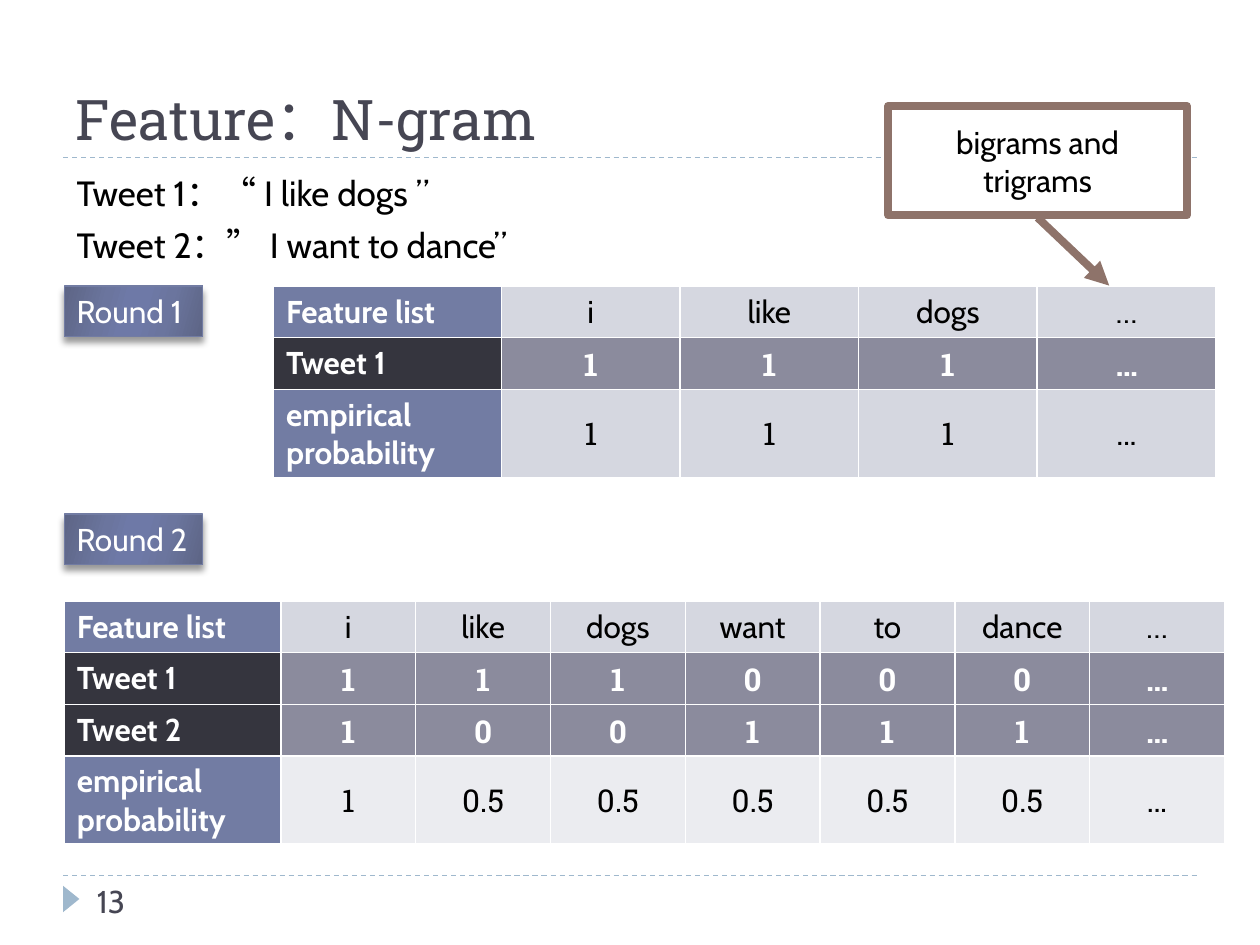
from dataclasses import dataclass
from typing import NamedTuple

from lxml.etree import SubElement
from pptx import Presentation
from pptx.dml.color import RGBColor
from pptx.enum.dml import MSO_LINE
from pptx.enum.shapes import MSO_CONNECTOR, MSO_SHAPE
from pptx.enum.text import MSO_ANCHOR, PP_ALIGN
from pptx.oxml import parse_xml
from pptx.oxml.ns import nsdecls, qn
from pptx.util import Inches, Pt

BLACK = RGBColor(0x00, 0x00, 0x00)
WHITE = RGBColor(0xFF, 0xFF, 0xFF)
SLATE = RGBColor(0x46, 0x46, 0x53)
SKY = RGBColor(0x9F, 0xB8, 0xCD)
BLUE = RGBColor(0x72, 0x7C, 0xA3)
CHARCOAL = RGBColor(0x35, 0x35, 0x3E)
GREY = RGBColor(0x8B, 0x8B, 0x9D)
PALE = RGBColor(0xD5, 0xD7, 0xE0)
PALEST = RGBColor(0xEB, 0xEC, 0xF0)
BROWN = RGBColor(0x8E, 0x73, 0x6A)
EDGE_BLUE = RGBColor(0x5D, 0x65, 0x85)
MID_BLUE = RGBColor(0x6B, 0x75, 0x9E)
CORE_BLUE = RGBColor(0x6E, 0x79, 0xA7)
BADGE_STOPS = ((0, EDGE_BLUE), (30, MID_BLUE), (45, CORE_BLUE),
               (55, CORE_BLUE), (73, MID_BLUE), (100, EDGE_BLUE))

SANS, SLAB = "Cabin", "Roboto Slab"

# The page is a grid of 100 columns and 75 rows of square units
PAGE_COLUMNS, PAGE_ROWS = 100, 75
UNIT = Inches(10) / PAGE_COLUMNS


def units(count: float) -> int:
    return round(count * UNIT)


class Area(NamedTuple):
    column: float
    row: float
    columns: float
    rows: float

    def lengths(self) -> list[int]:
        return [units(value) for value in self]


class Style(NamedTuple):
    size: float
    color: RGBColor
    face: str = SANS
    bold: bool = False


@dataclass
class TableRow:
    label: str
    values: list[str]
    label_fill: RGBColor
    fill: RGBColor
    style: Style
    height: float = 4.1


@dataclass
class Round:
    name: str
    badge: Area
    table: Area
    label_columns: float
    rows: list[TableRow]


def write(frame, lines: list[str], style: Style, align=PP_ALIGN.LEFT, gap: float = 0) -> None:
    frame.text = "\n".join(lines)
    for index, paragraph in enumerate(frame.paragraphs):
        paragraph.alignment = align
        if index:
            paragraph.space_before = Pt(gap)
        for run in paragraph.runs:
            run.font.size, run.font.name, run.font.bold = Pt(style.size), style.face, style.bold
            run.font.color.rgb = style.color


def add_text(page, area: Area, lines: list[str], style: Style,
             anchor=MSO_ANCHOR.TOP, gap: float = 0) -> None:
    frame = page.shapes.add_textbox(*area.lengths()).text_frame
    frame.word_wrap = True
    frame.vertical_anchor = anchor
    write(frame, lines, style, gap=gap)


def add_rule(page, row: float) -> None:
    rule = page.shapes.add_connector(MSO_CONNECTOR.STRAIGHT, units(5), units(row),
                                     units(PAGE_COLUMNS - 5), units(row))
    rule.line.color.rgb, rule.line.width = SKY, Pt(0.75)
    rule.line.dash_style = MSO_LINE.DASH
    SubElement(rule._element.spPr, qn("a:effectLst"))


def add_box(page, kind, area: Area, fill: RGBColor, line: RGBColor | None = None,
            width: float = 0.75):
    box = page.shapes.add_shape(kind, *area.lengths())
    box.shadow.inherit = False
    box.fill.solid()
    box.fill.fore_color.rgb = fill
    if line is None:
        box.line.fill.background()
    else:
        box.line.color.rgb, box.line.width = line, Pt(width)
    return box


def add_badge(page, area: Area, name: str) -> None:
    badge = add_box(page, MSO_SHAPE.RECTANGLE, area, BLUE, BLUE)
    badge.text_frame.vertical_anchor = MSO_ANCHOR.TOP
    write(badge.text_frame, [name], Style(18, WHITE))
    # Multi-stop gradient and soft shadow
    properties = badge._element.spPr
    stops = "".join(f'<a:gs pos="{place * 1000}"><a:srgbClr val="{color}"/></a:gs>'
                    for place, color in BADGE_STOPS)
    gradient = parse_xml(f'<a:gradFill {nsdecls("a")} rotWithShape="1"><a:gsLst>{stops}</a:gsLst>'
                         f'<a:lin ang="{16 * 60000}" scaled="0"/></a:gradFill>')
    properties.replace(properties.find(qn("a:solidFill")), gradient)
    properties.find(qn("a:effectLst")).append(parse_xml(
        f'<a:outerShdw {nsdecls("a")} blurRad="{Pt(4)}" dist="{Pt(3.4)}" dir="{90 * 60000}" '
        f'rotWithShape="0"><a:srgbClr val="{BLACK}"><a:alpha val="40000"/></a:srgbClr>'
        '</a:outerShdw>'))


def fill_cell(cell, text: str, fill: RGBColor, style: Style, align) -> None:
    cell.vertical_anchor = MSO_ANCHOR.MIDDLE
    cell.fill.solid()
    cell.fill.fore_color.rgb = fill
    write(cell.text_frame, [text], style, align)
    for index, side in enumerate("LRTB"):
        cell._tc.tcPr.insert(index, parse_xml(
            f'<a:ln{side} {nsdecls("a")} w="{Pt(1)}"><a:solidFill><a:srgbClr val="{WHITE}"/>'
            f'</a:solidFill></a:ln{side}>'))


def add_round(page, part: Round) -> None:
    add_badge(page, part.badge, part.name)
    value_count = len(part.rows[0].values)
    table = page.shapes.add_table(len(part.rows), value_count + 1, *part.table.lengths()).table
    table.first_row = table.horz_banding = False
    value_columns = (part.table.columns - part.label_columns) / value_count
    for index, column in enumerate(table.columns):
        column.width = units(value_columns if index else part.label_columns)
    for index, row in enumerate(part.rows):
        table.rows[index].height = units(row.height)
        fill_cell(table.cell(index, 0), row.label, row.label_fill,
                  Style(18, WHITE, bold=True), PP_ALIGN.LEFT)
        for position, value in enumerate(row.values, start=1):
            fill_cell(table.cell(index, position), value, row.fill, row.style, PP_ALIGN.CENTER)


def feature_row(words: str) -> TableRow:
    return TableRow("Feature list", words.split(), BLUE, PALE, Style(18, BLACK))


def tweet_row(label: str, counts: str) -> TableRow:
    return TableRow(label, counts.split(), CHARCOAL, GREY, Style(18, WHITE, SLAB, True))


def probability_row(shares: str, fill: RGBColor) -> TableRow:
    return TableRow("empirical probability", shares.split(), BLUE, fill,
                    Style(18, BLACK, SLAB), 6.9)


ROUNDS = [
    Round("Round 1", Area(5.1, 22.7, 11, 4), Area(21.7, 22.7, 74.8, 15.1), 18.1, [
        feature_row("i like dogs …"),
        tweet_row("Tweet 1", "1 1 1 …"),
        probability_row("1 1 1 …", PALE)]),
    Round("Round 2", Area(5.1, 40.8, 11, 4), Area(5.1, 47.7, 92.1, 19.2), 17.2, [
        feature_row("i like dogs want to dance …"),
        tweet_row("Tweet 1", "1 1 1 0 0 0 …"),
        tweet_row("Tweet 2", "1 0 0 1 1 1 …"),
        probability_row("1 0.5 0.5 0.5 0.5 0.5 …", PALEST)]),
]


def main() -> None:
    deck = Presentation()
    deck.slide_width, deck.slide_height = units(PAGE_COLUMNS), units(PAGE_ROWS)
    page = deck.slides.add_slide(deck.slide_layouts[6])

    # Rules and page marker
    for row in (69.5, 12.5):
        add_rule(page, row)
    marker = add_box(page, MSO_SHAPE.ISOSCELES_TRIANGLE, Area(4.6, 70.7, 2.1, 1.3), SKY)
    marker.rotation = 90

    # Title, page number and tweets
    add_text(page, Area(5, 1.7, 90, 10.8), ["Feature：N-gram"],
             Style(32, SLATE, SLAB), MSO_ANCHOR.BOTTOM)
    add_text(page, Area(6.7, 69.5, 21.7, 4), ["13"], Style(18, SLATE))
    add_text(page, Area(5.1, 13.1, 90, 8.7),
             ["Tweet 1：“ I like dogs ”", "Tweet 2：” I want to dance”"], Style(20, BLACK), gap=6)

    # Rounds: a badge and a feature table each
    for part in ROUNDS:
        add_round(page, part)

    # Callout pointing at the last feature column
    callout = add_box(page, MSO_SHAPE.LINE_CALLOUT_1, Area(70.5, 8.4, 23.7, 8.7),
                      WHITE, BROWN, 4.5)
    for index, share in enumerate((1.02, 0.5, 1.64, 0.74)):
        callout.adjustments[index] = share
    SubElement(callout.line._get_or_add_ln(), qn("a:tailEnd"), type="triangle")
    callout.text_frame.word_wrap = True
    callout.text_frame.vertical_anchor = MSO_ANCHOR.MIDDLE
    write(callout.text_frame, ["bigrams and trigrams"], Style(18, BLACK), PP_ALIGN.CENTER)

    deck.save("out.pptx")


if __name__ == "__main__":
    main()
